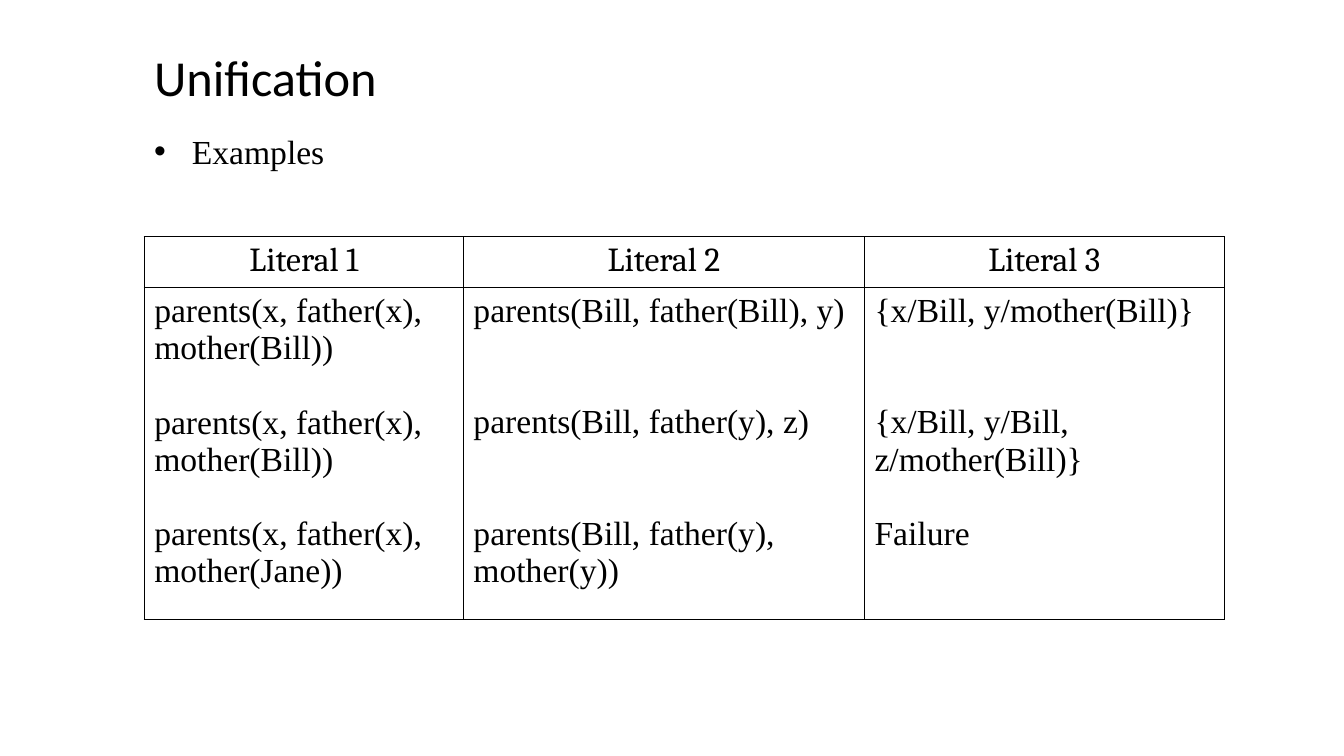
"""Build a slide with a table of unification examples."""
from pptx import Presentation
from pptx import util as u
from pptx.dml import color
from pptx.enum import text
from pptx.oxml import parse_xml
from pptx.oxml import ns

LEFT = 103
LINE = 26.5
HEADS = ["Literal 1", "Literal 2", "Literal 3"]
WIDTHS = [228, 286.5, 257]
HEIGHTS = [36.5, 237]
TERMS = [
    [["parents(x, father(x),", "mother(Bill))"],
     ["parents(x, father(x),", "mother(Bill))"],
     ["parents(x, father(x),", "mother(Jane))"]],
    [["parents(Bill, father(Bill), y)"],
     ["parents(Bill, father(y), z)"],
     ["parents(Bill, father(y), mother(y))"]],
    [["{x/Bill, y/mother(Bill)}"],
     ["{x/Bill, y/Bill,", "z/mother(Bill)}"],
     ["Failure"]],
]


def rgb(code):
    return color.RGBColor.from_string(code)


def apply(item, values):
    for name, value in values.items():
        setattr(item, name, value)


class Page:
    ink = "000000"
    paper = "FFFFFF"
    title = {"name": "Calibri", "size": u.Pt(36)}
    head = {"name": "Cambria", "size": u.Pt(24)}
    body = {"name": "Times New Roman", "size": u.Pt(24)}

    def __init__(self, deck):
        self.slide = deck.slides.add_slide(deck.slide_layouts[6])

    def put(self, para, words, font, **form):
        run = para.add_run()
        run.text = words
        apply(run.font, font)
        run.font.color.rgb = rgb(self.ink)
        apply(para, form)

    def label(self, words, font, box, wrap, **form):
        frame = self.slide.shapes.add_textbox(*map(u.Pt, box)).text_frame
        frame.word_wrap = wrap
        para = frame.paragraphs[0]
        self.put(para, words, font, **form)
        return para

    def bullet(self, para, dent):
        props = para._p.get_or_add_pPr()
        props.set("marL", str(u.Pt(dent)))
        props.set("indent", str(-u.Pt(dent)))
        for tag in ('buFont typeface="Arial"', 'buChar char="•"'):
            props.append(parse_xml(f'<a:{tag} {ns.nsdecls("a")}/>'))

    def grid(self, left, top, widths, heights):
        box = map(u.Pt, (left, top, sum(widths), sum(heights)))
        table = self.slide.shapes.add_table(len(heights), len(widths), *box).table
        apply(table, {"first_row": False, "horz_banding": False})
        for col, width in zip(table.columns, widths):
            col.width = u.Pt(width)
        for row, height in zip(table.rows, heights):
            row.height = u.Pt(height)
        for cell in table.iter_cells():
            self.border(cell)
            cell.fill.solid()
            cell.fill.fore_color.rgb = rgb(self.paper)
        return table

    def border(self, cell):
        props = cell._tc.get_or_add_tcPr()
        for side in "LRTB":
            props.append(parse_xml(
                f'<a:ln{side} {ns.nsdecls("a")} w="{u.Pt(1)}"><a:solidFill>'
                f'<a:srgbClr val="{self.ink}"/></a:solidFill></a:ln{side}>'))

    def stack(self, cell, groups):
        frame = cell.text_frame
        para, gap = frame.paragraphs[0], 0
        for group in groups:
            for words in group:
                para = para or frame.add_paragraph()
                self.put(para, words, self.body, space_before=u.Pt(gap))
                para, gap = None, 0
            gap = (3 - len(group)) * LINE


def main():
    deck = Presentation()
    apply(deck, {"slide_width": u.Pt(960), "slide_height": u.Pt(540)})
    page = Page(deck)
    page.label("Unification", page.title, (LEFT, 29.5, 180, 51), False)
    para = page.label("Examples", page.body, (LEFT, 90, 736, 407), True,
                      space_after=u.Pt(12))
    page.bullet(para, 27)
    table = page.grid(LEFT, 169, WIDTHS, HEIGHTS)
    for col, (head, groups) in enumerate(zip(HEADS, TERMS)):
        page.put(table.cell(0, col).text_frame.paragraphs[0], head, page.head,
                 alignment=text.PP_ALIGN.CENTER)
        page.stack(table.cell(1, col), groups)
    deck.save("out.pptx")


if __name__ == "__main__":
    main()
